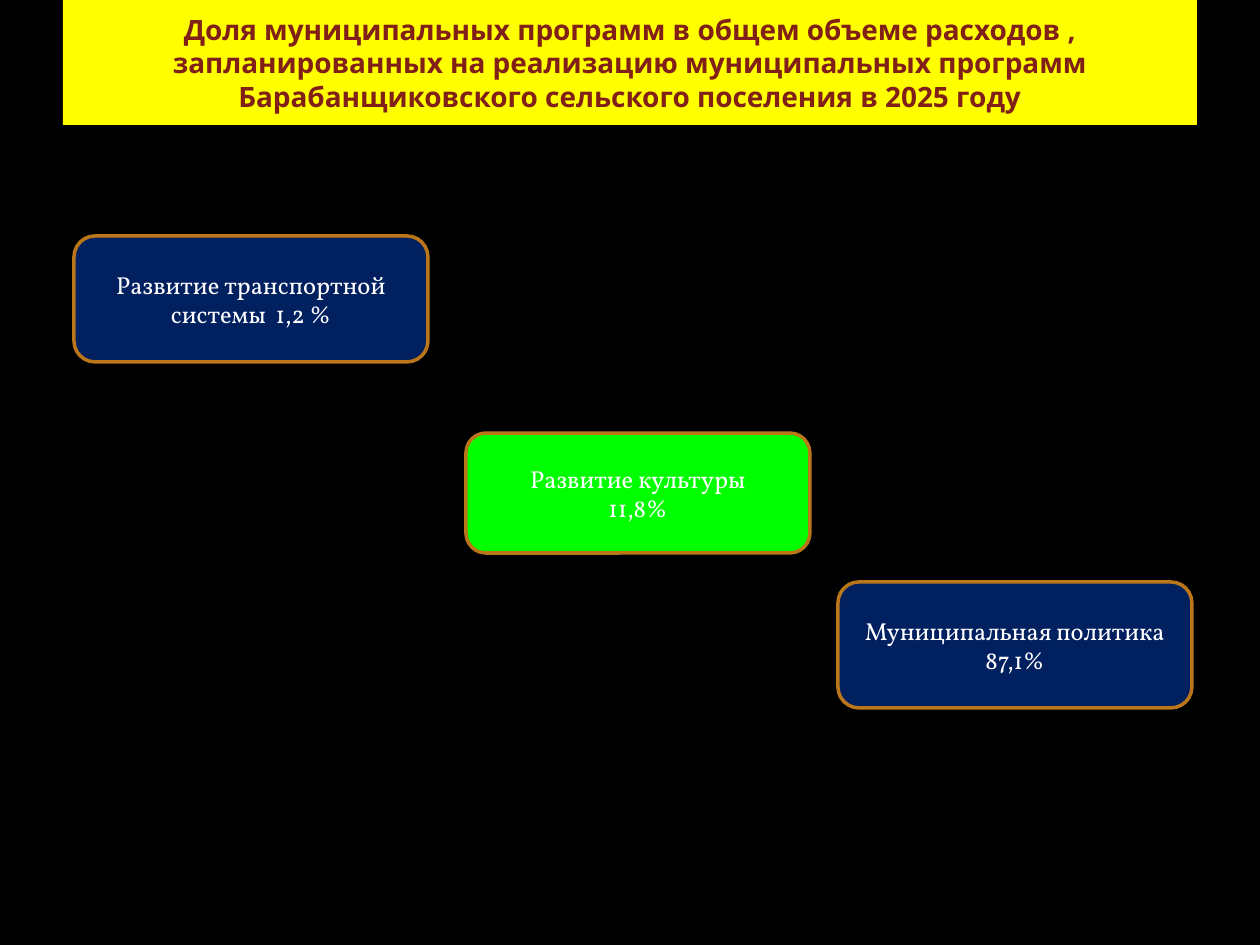
from pptx import Presentation
from pptx import util as u
from pptx.dml.color import RGBColor
from pptx.enum import shapes, text

PX = u.Inches(1) // 126

BLACK = RGBColor(0x00, 0x00, 0x00)
WHITE = RGBColor(0xFF, 0xFF, 0xFF)
YELLOW = RGBColor(0xFF, 0xFF, 0x00)
MAROON = RGBColor(0x80, 0x20, 0x17)
NAVY = RGBColor(0x00, 0x20, 0x60)
GREEN = RGBColor(0x00, 0xFF, 0x00)
BRONZE = RGBColor(0xBB, 0x76, 0x1A)

TITLE = (
    "Доля муниципальных программ в общем объеме расходов , "
    "запланированных на реализацию муниципальных программ "
    "Барабанщиковского сельского поселения в 2025 году"
)
PROGRAMS = [
    ((74, 236, 354, 126), NAVY, ["Развитие транспортной системы  1,2 %"]),
    ((466, 433, 344, 120), GREEN, ["Развитие культуры", "11,8%"]),
    ((838, 582, 354, 126), NAVY, ["Муниципальная политика 87,1%"]),
]


def add_panel(s, kind, box, fill, lines, font, size, color, bold=False):
    """Add a filled shape with centred text, one paragraph per line."""
    sp = s.shapes.add_shape(kind, *(v * PX for v in box))
    sp.shadow.inherit = False
    sp.fill.solid()
    sp.fill.fore_color.rgb = fill
    tf = sp.text_frame
    tf.word_wrap = True
    tf.vertical_anchor = text.MSO_ANCHOR.MIDDLE
    for i, line in enumerate(lines):
        p = tf.paragraphs[0] if i == 0 else tf.add_paragraph()
        p.alignment = text.PP_ALIGN.CENTER
        r = p.add_run()
        r.text = line
        r.font.name = font
        r.font.size = u.Pt(size)
        r.font.bold = bold
        r.font.color.rgb = color
    return sp


def add_title(s, box):
    sp = add_panel(s, shapes.MSO_SHAPE.RECTANGLE, box, YELLOW, [TITLE],
                   "Noto Sans", 16, MAROON, bold=True)
    sp.line.fill.background()


def add_program(s, box, fill, lines):
    sp = add_panel(s, shapes.MSO_SHAPE.ROUNDED_RECTANGLE, box, fill, lines,
                   "Vollkorn", 14, WHITE)
    sp.line.color.rgb = BRONZE
    sp.line.width = u.Pt(2)


def main():
    prs = Presentation()
    prs.slide_width, prs.slide_height = 1260 * PX, 945 * PX
    s = prs.slides.add_slide(prs.slide_layouts[6])
    s.background.fill.solid()
    s.background.fill.fore_color.rgb = BLACK
    add_title(s, (63, 0, 1134, 125))
    for box, fill, lines in PROGRAMS:
        add_program(s, box, fill, lines)
    prs.save("out.pptx")


if __name__ == "__main__":
    main()
